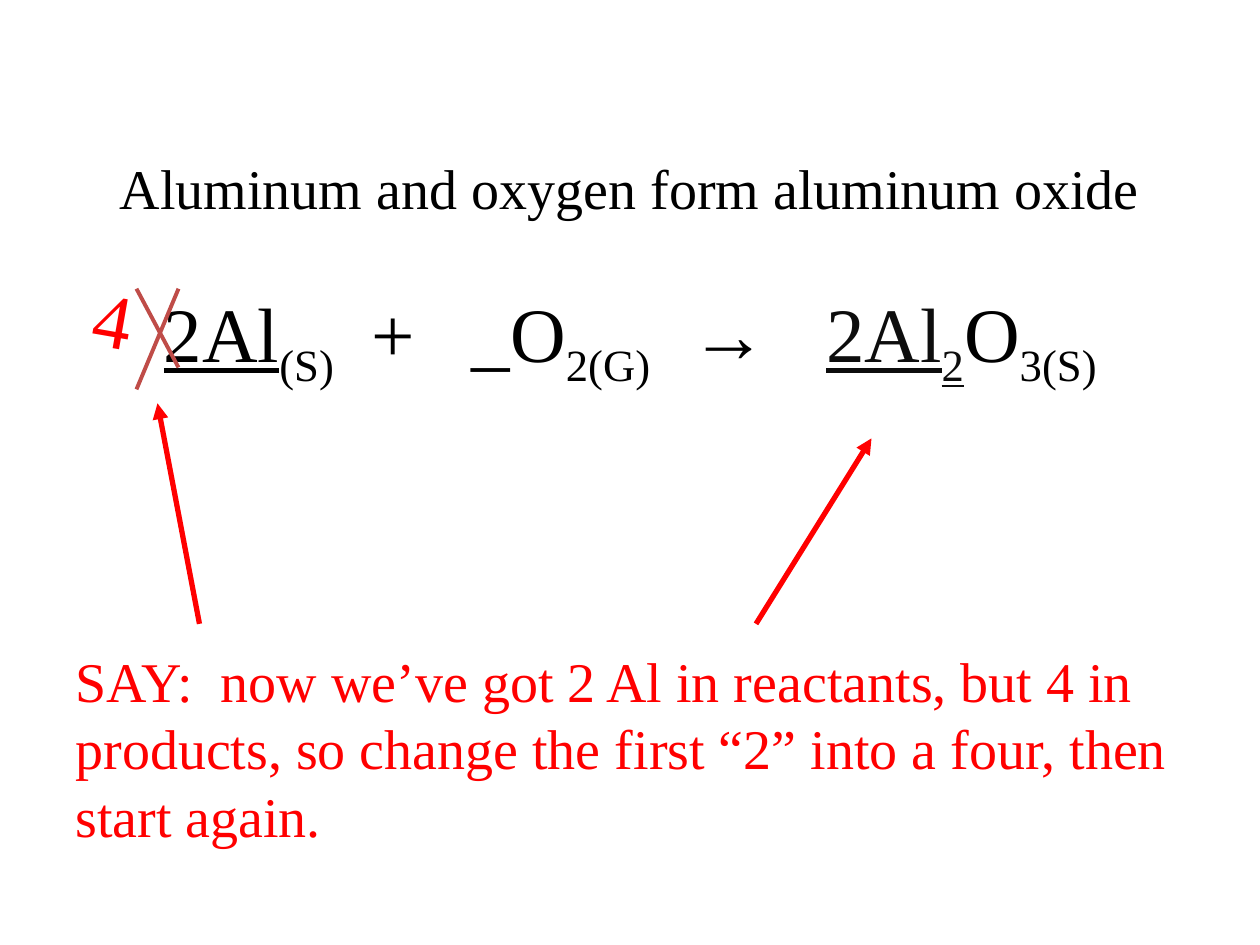
from lxml import etree
from pptx import Presentation
from pptx.dml.color import RGBColor
from pptx.enum import shapes, text
from pptx.oxml import ns
from pptx.util import Pt

FONT = "Times New Roman"
BLACK, NEAR_BLACK, RED, BRICK = "000000", "0D0D0D", "FF0000", "BF4C48"

HEADING = "Aluminum and oxygen form aluminum oxide"
EQUATION = [
    ("\t", BLACK, False, False),
    ("2Al", BLACK, True, False),
    ("(S)", BLACK, False, True),
    ("\t+\t_O", BLACK, False, False),
    ("2(G)", BLACK, False, True),
    ("\t→\t", BLACK, False, False),
    ("2Al", NEAR_BLACK, True, False),
    ("2", NEAR_BLACK, True, True),
    ("O", BLACK, False, False),
    ("3(S)", BLACK, False, True),
]
TERM_STOPS = [86.5, 205.5, 262.5, 387.5, 465]
INSTRUCTION = ("SAY:  now we’ve got 2 Al in reactants, but 4 in products, "
               "so change the first “2” into a four, then start again.")
ARROWS = [((114, 356.5), (90, 230.5)), ((432, 356.5), (498, 250.5))]
CROSS_OUT = [((102, 165), (78, 222.5)), ((78, 165), (102, 210))]


def color(value):
    return RGBColor.from_string(value)


def style(run, size, ink):
    run.font.name = FONT
    run.font.size = Pt(size)
    run.font.color.rgb = color(ink)


def add_text(slide, words, box, size, ink):
    holder = slide.shapes.add_textbox(*map(Pt, box))
    frame = holder.text_frame
    frame.word_wrap = True
    frame.auto_size = text.MSO_AUTO_SIZE.SHAPE_TO_FIT_TEXT
    frame.text = words
    style(frame.paragraphs[0].runs[0], size, ink)
    return holder


def add_equation(frame):
    equation = frame.add_paragraph()
    equation.alignment = text.PP_ALIGN.LEFT
    equation.space_before = Pt(37)
    properties = equation._p.get_or_add_pPr()
    stops = etree.SubElement(properties, ns.qn("a:tabLst"))
    for stop in TERM_STOPS:
        etree.SubElement(stops, ns.qn("a:tab"), pos=str(Pt(stop)), algn="l")
    for words, ink, underlined, subscript in EQUATION:
        term = equation.add_run()
        term.text = words
        style(term, 44, ink)
        term.font.underline = underlined
        if subscript:
            term.font._element.set("baseline", "-25000")


def add_line(slide, start, end, ink, width, arrow=False):
    line = slide.shapes.add_connector(
        shapes.MSO_CONNECTOR.STRAIGHT, *map(Pt, start + end))
    line.line.color.rgb = color(ink)
    line.line.width = Pt(width)
    if arrow:
        etree.SubElement(line.line._get_or_add_ln(), ns.qn("a:tailEnd"), type="triangle")
    etree.SubElement(line._element.spPr, ns.qn("a:effectLst"))


def main():
    deck = Presentation()
    deck.slide_width, deck.slide_height = Pt(720), Pt(540)
    slide = deck.slides.add_slide(deck.slide_layouts[6])

    reaction = add_text(slide, HEADING, (0, 84, 720, 138), 32, BLACK)
    reaction.text_frame.paragraphs[0].alignment = text.PP_ALIGN.CENTER
    add_equation(reaction.text_frame)
    add_text(slide, INSTRUCTION, (36, 366, 648, 124), 32, RED)

    for start, end in ARROWS:
        add_line(slide, start, end, RED, 3, arrow=True)
    for start, end in CROSS_OUT:
        add_line(slide, start, end, BRICK, 2.25)

    correction = add_text(slide, "4", (47, 152, 42, 60.5), 44, RED)
    correction.rotation = 9.9
    deck.save("out.pptx")


if __name__ == "__main__":
    main()
